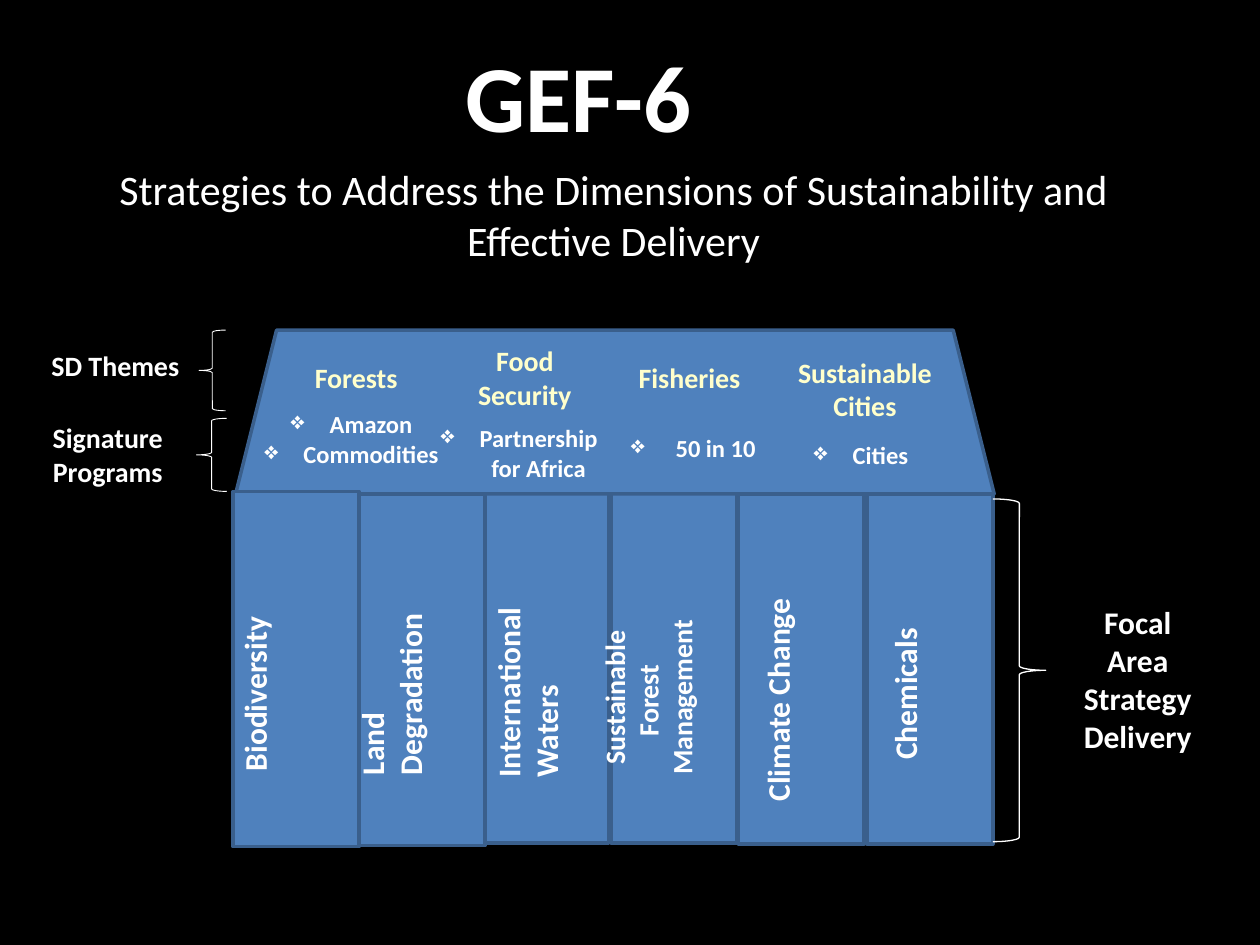
from lxml import etree
from pptx import Presentation
from pptx.dml.color import RGBColor
from pptx.enum.shapes import MSO_SHAPE
from pptx.enum.text import MSO_ANCHOR, MSO_AUTO_SIZE, PP_ALIGN
from pptx.oxml.ns import qn
from pptx.util import Inches, Pt

BLACK = RGBColor(0x00, 0x00, 0x00)
WHITE = RGBColor(0xFF, 0xFF, 0xFF)
CREAM = RGBColor(0xFF, 0xFF, 0xCC)
BLUE = RGBColor(0x4F, 0x81, 0xBD)
NAVY = RGBColor(0x3A, 0x5F, 0x8C)

RECT = MSO_SHAPE.RECTANGLE
ROOF = MSO_SHAPE.TRAPEZOID
OPEN = MSO_SHAPE.LEFT_BRACE
CLOSE = MSO_SHAPE.RIGHT_BRACE
LEFT, MID = PP_ALIGN.LEFT, PP_ALIGN.CENTER
TOP = MSO_ANCHOR.TOP
FIT, FIXED = MSO_AUTO_SIZE.SHAPE_TO_FIT_TEXT, MSO_AUTO_SIZE.NONE

# Left to right: left, top, width, height
PILLARS = [
    (1.85, 3.9, 1, 2.82),
    (2.85, 3.92, 1, 2.79),
    (3.83, 3.9, 1, 2.79),
    (4.85, 3.9, 1, 2.79),
    (5.86, 3.92, 1, 2.78),
    (6.88, 3.92, 1, 2.78),
]
AREAS = [
    ("Biodiversity", (1.82, 4.89, 0.5, 1.33), 18, LEFT),
    ("Land \nDegradation", (2.75, 4.86, 0.81, 1.39), 18, LEFT),
    ("International \nWaters", (3.83, 4.75, 0.81, 1.52), 18, LEFT),
    ("Sustainable\nForest \nManagement", (4.69, 4.86, 1.01, 1.35), 16, MID),
    ("Climate Change", (5.97, 4.74, 0.5, 1.72), 18, LEFT),
    ("Chemicals", (6.98, 4.98, 0.5, 1.15), 18, LEFT),
]
THEMES = [
    ("Forests", (2.4, 2.81, 0.87, 0.37), LEFT),
    ("Food\nSecurity", (3.69, 2.68, 0.95, 0.64), MID),
    ("Fisheries", (4.97, 2.81, 1.02, 0.37), LEFT),
    ("Sustainable\nCities", (6.23, 2.77, 1.27, 0.64), MID),
]
PROGRAMS = [
    (["Amazon", "Commodities"], (1.99, 3.2, 1.6, 0.57), MID),
    (["Partnership\nfor Africa"], (3.39, 3.31, 1.46, 0.57), MID),
    ([" 50 in 10"], (4.91, 3.39, 1.2, 0.34), LEFT),
    (["Cities"], (6.36, 3.44, 0.97, 0.34), LEFT),
]
SIDES = [
    ("SD Themes", (0.31, 2.72, 1.23, 0.37), 16, LEFT),
    ("Signature\nPrograms", (0.31, 3.29, 1.09, 0.64), 16, MID),
    ("Focal\nArea\nStrategy\nDelivery", (8.5, 4.74, 1.06, 1.31), 18, MID),
]
BRACES = [
    (OPEN, (1.58, 2.62, 0.21, 0.64), 0.5),
    (OPEN, (1.56, 3.32, 0.24, 0.58), 0.5),
    (CLOSE, (7.88, 3.96, 0.42, 2.72), 0.75),
]


def scale(box):
    return [Inches(n) for n in box]


def style(para, size, color, bold, align):
    para.alignment = align
    for run in para.runs:
        font = run.font
        font.name, font.size, font.bold = "Calibri", Pt(size), bold
        font.color.rgb = color


def add_bullet(para):
    props = para._p.get_or_add_pPr()
    props.set("marL", str(Inches(0.31)))
    props.set("indent", str(-Inches(0.31)))
    etree.SubElement(props, qn("a:buChar")).set("char", "❖")


def add_label(slide, lines, box, size, align, color=WHITE, bullet=False):
    """Add bold text; each item of lines is one paragraph."""
    shape = slide.shapes.add_textbox(*scale(box))
    frame = shape.text_frame
    frame.word_wrap = False
    frame.auto_size = FIT
    for i, line in enumerate(lines):
        para = frame.add_paragraph() if i else frame.paragraphs[0]
        para.text = line
        if bullet:
            add_bullet(para)
        style(para, size, color, True, align)
    return shape


def add_block(slide, kind, box):
    shape = slide.shapes.add_shape(kind, *scale(box))
    shape.shadow.inherit = False
    shape.fill.solid()
    shape.fill.fore_color.rgb = BLUE
    shape.line.color.rgb = NAVY
    shape.line.width = Pt(2)


def add_brace(slide, kind, box, width):
    shape = slide.shapes.add_shape(kind, *scale(box))
    shape.shadow.inherit = False
    shape.fill.background()
    shape.line.color.rgb = WHITE
    shape.line.width = Pt(width)


def fill_holder(holder, text, box, size, bold, wrap):
    holder.left, holder.top, holder.width, holder.height = scale(box)
    frame = holder.text_frame
    frame.text = text
    frame.word_wrap = wrap
    frame.auto_size = FIXED
    frame.vertical_anchor = TOP
    para = frame.paragraphs[0]
    para.space_before = Pt(0)
    style(para, size, WHITE, bold, MID)


def main():
    deck = Presentation()
    deck.slide_width, deck.slide_height = Inches(10), Inches(7.5)
    slide = deck.slides.add_slide(deck.slide_layouts[0])
    slide.background.fill.solid()
    slide.background.fill.fore_color.rgb = BLACK

    fill_holder(slide.shapes.title, "GEF-6", (3.58, 0.25, 2.02, 1.01),
                54, True, False)
    fill_holder(slide.placeholders[1],
                "Strategies to Address the Dimensions of Sustainability "
                "and Effective Delivery",
                (0.83, 1.25, 8.08, 0.91), 24, False, True)

    # The roof covers all pillars but the first two
    for box in reversed(PILLARS[2:]):
        add_block(slide, RECT, box)
    add_block(slide, ROOF, (1.87, 2.62, 6.02, 1.3))
    for box in reversed(PILLARS[:2]):
        add_block(slide, RECT, box)

    for text, box, size, align in AREAS:
        label = add_label(slide, [text], box, size, align)
        label.element.txBody.bodyPr.set("vert", "vert270")
    for text, box, align in THEMES:
        add_label(slide, [text], box, 16, align, CREAM)
    for lines, box, align in PROGRAMS:
        add_label(slide, lines, box, 14, align, bullet=True)
    for text, box, size, align in SIDES:
        add_label(slide, [text], box, size, align)
    for kind, box, width in BRACES:
        add_brace(slide, kind, box, width)

    deck.save("out.pptx")


if __name__ == "__main__":
    main()
